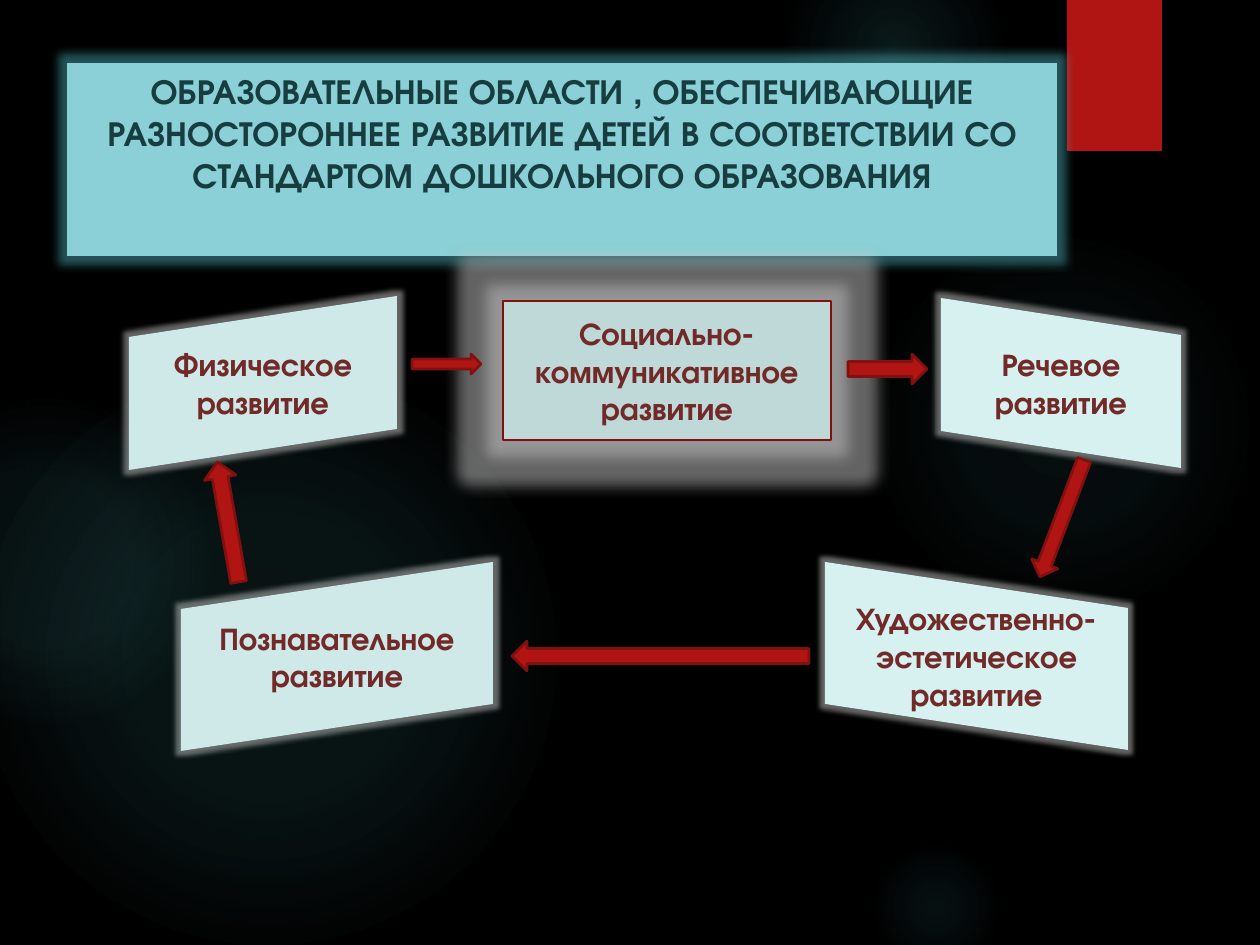
import pptx
import pptx.util
import pptx.dml.color
import pptx.enum.shapes
import pptx.enum.text
import pptx.oxml
import pptx.oxml.ns

SCALE = 914400 / 126
FONT = "TeX Gyre Adventor"
RED, DARK, TEAL, GREY = "B01513", "82100E", "50B9C1", "C8C8C8"
KIND = pptx.enum.shapes.MSO_SHAPE
ANCHOR = pptx.enum.text.MSO_ANCHOR


def px(num):
    return pptx.util.Emu(round(num * SCALE))


def color(code):
    return pptx.dml.color.RGBColor.from_string(code)


def node(body):
    space = pptx.oxml.ns.nsdecls("a")
    return pptx.oxml.parse_xml(body.replace(">", f" {space}>", 1) if "rad=" not in body
                               else body.replace("<a:glow", f"<a:glow {space}", 1))


def tint(code, alpha):
    return f'<a:srgbClr val="{code}"><a:alpha val="{alpha * 1000}"/></a:srgbClr>'


class Board:
    def __init__(self, deck):
        self.slide = deck.slides.add_slide(deck.slide_layouts[5])
        self.shapes = self.slide.shapes
        back = self.slide.background.fill
        back.solid()
        back.fore_color.rgb = color("000000")

    def paint(self, shape, fill, line=None):
        shape.shadow.inherit = False
        shape.fill.solid()
        shape.fill.fore_color.rgb = color(fill)
        if line:
            shape.line.color.rgb = color(line)
            shape.line.width = pptx.util.Pt(1.5)
        else:
            shape.line.fill.background()

    def glow(self, shape, code, alpha, size):
        """Add a soft halo; size is its radius in px."""
        effect = shape._element.spPr.find(pptx.oxml.ns.qn("a:effectLst"))
        effect.append(node(f'<a:glow rad="{px(size)}">{tint(code, alpha)}</a:glow>'))

    def letter(self, shape, text, size, code, anchor):
        """Set and format the words inside a shape."""
        frame = shape.text_frame
        frame.text = text
        frame.word_wrap = True
        frame.auto_size = pptx.enum.text.MSO_AUTO_SIZE.NONE
        frame.vertical_anchor = anchor
        par = frame.paragraphs[0]
        par.alignment = pptx.enum.text.PP_ALIGN.CENTER
        font = par.runs[0].font
        font.name, font.size, font.bold = FONT, pptx.util.Pt(size), True
        font.color.rgb = color(code)

    def form(self, kind, left, top, width, height):
        return self.shapes.add_shape(kind, px(left), px(top), px(width), px(height))

    def orb(self, left, top, size, stops):
        """Draw a faint round light; stops are (place, alpha) in percent."""
        shape = self.form(KIND.OVAL, left, top, size, size)
        self.paint(shape, TEAL)
        marks = "".join(f'<a:gs pos="{place * 1000}">{tint(TEAL, alpha)}</a:gs>'
                        for place, alpha in stops)
        grad = node(f'<a:gradFill><a:gsLst>{marks}</a:gsLst><a:path path="circle">'
                    '<a:fillToRect l="50000" t="50000" r="50000" b="50000"/>'
                    '</a:path></a:gradFill>')
        props = shape._element.spPr
        props.replace(props.find(pptx.oxml.ns.qn("a:solidFill")), grad)

    def block(self, left, top, width, height):
        self.paint(self.form(KIND.RECTANGLE, left, top, width, height), RED)

    def title(self, text, left, top, width, height):
        shape = self.shapes.title
        self.shapes._spTree.append(shape._element)
        shape.left, shape.top = px(left), px(top)
        shape.width, shape.height = px(width), px(height)
        self.paint(shape, "8AD0D6")
        self.glow(shape, TEAL, 45, 18)
        self.letter(shape, text, 20, "173D40", ANCHOR.TOP)

    def label(self, shape, text):
        self.letter(shape, text, 18, "722A28", ANCHOR.MIDDLE)

    def card(self, text, left, top, width, height):
        shape = self.form(KIND.RECTANGLE, left, top, width, height)
        self.paint(shape, "BFD8D8", DARK)
        self.glow(shape, GREY, 50, 30)
        self.label(shape, text)

    def panel(self, text, left, top, width, height, drop, fill):
        """Draw a slanted card whose right side lies drop px below its left."""
        right = left + width
        pen = self.shapes.build_freeform(left, top, SCALE)
        pen.add_line_segments([(right, top + drop), (right, top + drop + height),
                               (left, top + height)])
        shape = pen.convert_to_shape()
        self.paint(shape, fill)
        self.glow(shape, GREY, 50, 10)
        self.label(shape, text)

    def arrow(self, kind, left, top, width, height, turn=0):
        shape = self.form(kind, left, top, width, height)
        shape.rotation = turn
        self.paint(shape, RED, DARK)


def main():
    deck = pptx.Presentation()
    deck.slide_width, deck.slide_height = px(1260), px(945)
    board = Board(deck)

    for orb in [
        (868, 231, 388, [(0, 7), (36, 6), (69, 0)]),
        (784, -63, 220, [(0, 14), (36, 7), (73, 0)]),
        (868, 840, 136, [(0, 9), (36, 5), (66, 0)]),
        (-21, 368, 577, [(0, 11), (36, 10), (75, 0)]),
        (-116, 399, 325, [(0, 8), (36, 8), (72, 0)]),
    ]:
        board.orb(*orb)
    board.block(1067, 0, 95, 151)
    board.title("ОБРАЗОВАТЕЛЬНЫЕ ОБЛАСТИ , ОБЕСПЕЧИВАЮЩИЕ РАЗНОСТОРОННЕЕ РАЗВИТИЕ "
                "ДЕТЕЙ В СООТВЕТСТВИИ СО СТАНДАРТОМ ДОШКОЛЬНОГО ОБРАЗОВАНИЯ",
                67, 63, 990, 193)

    board.card("Социально-коммуникативное развитие", 503, 301, 328, 139)
    for panel in [
        ("Физическое развитие", 129, 337, 268, 133, -41, "CFE8E8"),
        ("Речевое развитие", 941, 298, 240, 133, 37, "D7F0F0"),
        ("Познавательное развитие", 181, 609, 312, 142, -47, "CFE8E8"),
        ("Художественно-эстетическое развитие", 825, 562, 303, 142, 46, "D7F0F0"),
    ]:
        board.panel(*panel)

    for arrow in [
        (KIND.RIGHT_ARROW, 412, 354, 69, 20),
        (KIND.RIGHT_ARROW, 848, 354, 79, 30),
        (KIND.DOWN_ARROW, 1048, 456, 28, 125, 20.8),
        (KIND.RIGHT_ARROW, 512, 641, 297, 30, 180),
        (KIND.DOWN_ARROW, 212, 461, 32, 122, 170),
    ]:
        board.arrow(*arrow)
    deck.save("out.pptx")


if __name__ == "__main__":
    main()
